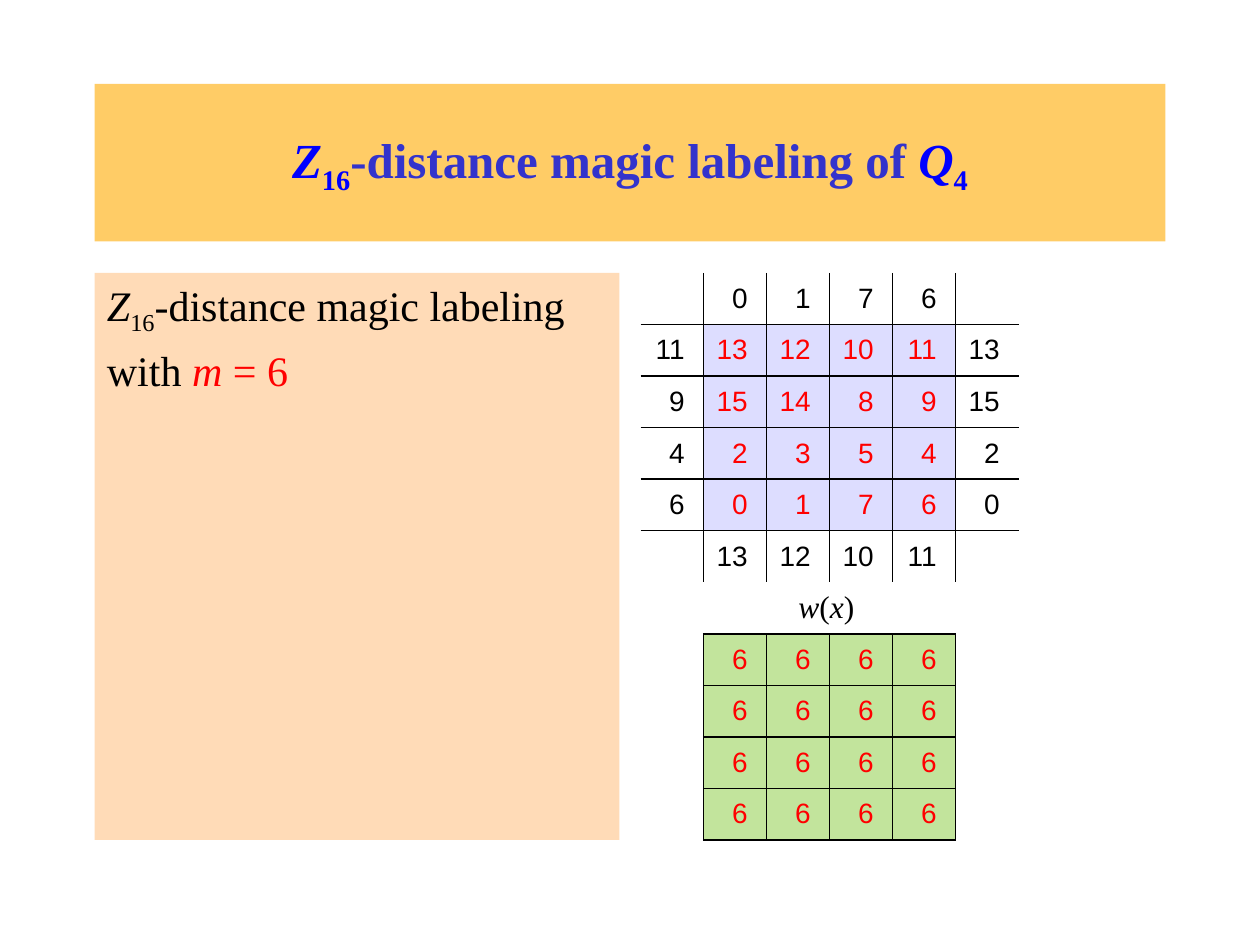
from lxml.etree import SubElement
from pptx import Presentation
from pptx.dml.color import RGBColor
from pptx.enum.text import MSO_ANCHOR as Anchor, PP_ALIGN as Align
from pptx.oxml.ns import qn
from pptx.util import Pt

COLORS = {
    "title fill": "FFCC66", "title": "3333CC", "symbol": "0000FF",
    "panel": "FFDBB7", "black": "000000", "red": "FF0000",
    "labels": "DDDDFF", "weights": "C2E49C",
}
SERIF, SANS = "Times New Roman", "Arial"

# Runs: text, color, style (i = italic, s = subscript)
TITLE = [("Z", "symbol", "i"), ("16", "symbol", "s"),
         ("-distance magic labeling of ", "title", ""),
         ("Q", "symbol", "i"), ("4", "symbol", "s")]
STATEMENT = [
    [("Z", "black", "i"), ("16", "black", "s"),
     ("-distance magic labeling", "black", "")],
    [("with ", "black", ""), ("m", "red", "i"), (" = 6", "red", "")],
]
WEIGHT_HEADING = [("w", "black", "i"), ("(", "black", ""),
                  ("x", "black", "i"), (")", "black", "")]
LABELING = [
    ["", 0, 1, 7, 6, ""],
    [11, 13, 12, 10, 11, 13],
    [9, 15, 14, 8, 9, 15],
    [4, 2, 3, 5, 4, 2],
    [6, 0, 1, 7, 6, 0],
    ["", 13, 12, 10, 11, ""],
]
HEADING_ROW = len(LABELING)
GRID = LABELING + [[""] * 6] + [["", 6, 6, 6, 6, ""]] * 4

TITLE_BOX = (54, 48, 612, 90)
PANEL_BOX = (54, 156, 300, 324)
TABLE_BOX = (366, 156, 216, 324)


def color(name):
    return RGBColor.from_string(COLORS[name])


def fill_with(target, name):
    target.fill.solid()
    target.fill.fore_color.rgb = color(name)


def add_runs(paragraph, runs, size, font_name=SERIF, bold=False):
    for text, color_name, style in runs:
        run = paragraph.add_run()
        run.text = text
        font = run.font
        font.name, font.size, font.bold = font_name, Pt(size), bold
        font.italic = "i" in style
        font.color.rgb = color(color_name)
        if "s" in style:
            font._element.set("baseline", "-25000")


def has_vertical(row, edge):
    return row != HEADING_ROW and 1 <= edge <= 5


def has_horizontal(edge, column):
    """Upper rules cross the whole table; lower ones only the weights."""
    return 1 <= edge <= 5 or (edge > HEADING_ROW and 1 <= column <= 4)


def set_borders(cell, row, column):
    sides = {
        "a:lnL": has_vertical(row, column),
        "a:lnR": has_vertical(row, column + 1),
        "a:lnT": has_horizontal(row, column),
        "a:lnB": has_horizontal(row + 1, column),
    }
    properties = cell._tc.get_or_add_tcPr()
    for position, (tag, visible) in enumerate(sides.items()):
        line = SubElement(properties, qn(tag), w=str(Pt(1)))
        if visible:
            fill = SubElement(line, qn("a:solidFill"))
            SubElement(fill, qn("a:srgbClr"), val=COLORS["black"])
        else:
            SubElement(line, qn("a:noFill"))
        properties.insert(position, line)


def add_title(slide):
    title = slide.shapes.title
    title.left, title.top, title.width, title.height = map(Pt, TITLE_BOX)
    fill_with(title, "title fill")
    title.text_frame.vertical_anchor = Anchor.MIDDLE
    paragraph = title.text_frame.paragraphs[0]
    paragraph.alignment = Align.CENTER
    add_runs(paragraph, TITLE, 28, bold=True)


def add_statement(slide):
    panel = slide.shapes.add_textbox(*map(Pt, PANEL_BOX))
    fill_with(panel, "panel")
    frame = panel.text_frame
    frame.word_wrap = True
    for index, runs in enumerate(STATEMENT):
        paragraph = frame.add_paragraph() if index else frame.paragraphs[0]
        paragraph.space_before = Pt(4.8)
        properties = paragraph._p.get_or_add_pPr()
        properties.set("marL", str(Pt(27)))
        properties.set("indent", str(Pt(-27)))
        add_runs(paragraph, runs, 24)


def add_grid(slide):
    rows, columns = len(GRID), len(GRID[0])
    table = slide.shapes.add_table(rows, columns, *map(Pt, TABLE_BOX)).table
    table.first_row = table.horz_banding = False
    for table_column in table.columns:
        table_column.width = Pt(TABLE_BOX[2] / columns)
    for table_row in table.rows:
        table_row.height = Pt(TABLE_BOX[3] / rows)
    for r, values in enumerate(GRID):
        for c, value in enumerate(values):
            cell = table.cell(r, c)
            cell.vertical_anchor = Anchor.MIDDLE
            cell.margin_right = Pt(10.8)
            inner = 1 <= c <= 4
            if inner and 1 <= r <= 4:
                fill_with(cell, "labels")
            elif inner and r > HEADING_ROW:
                fill_with(cell, "weights")
            else:
                cell.fill.background()
            set_borders(cell, r, c)
            if value != "":
                is_red = inner and r not in (0, HEADING_ROW - 1)
                paragraph = cell.text_frame.paragraphs[0]
                paragraph.alignment = Align.RIGHT
                run = (str(value), "red" if is_red else "black", "")
                add_runs(paragraph, [run], 16, SANS)
    heading = table.cell(HEADING_ROW, 1)
    heading.merge(table.cell(HEADING_ROW, 4))
    paragraph = heading.text_frame.paragraphs[0]
    paragraph.alignment = Align.CENTER
    add_runs(paragraph, WEIGHT_HEADING, 18)


def main():
    deck = Presentation()
    deck.slide_width, deck.slide_height = Pt(720), Pt(540)
    slide = deck.slides.add_slide(deck.slide_layouts[5])
    add_title(slide)
    add_statement(slide)
    add_grid(slide)
    deck.save("out.pptx")


if __name__ == "__main__":
    main()
